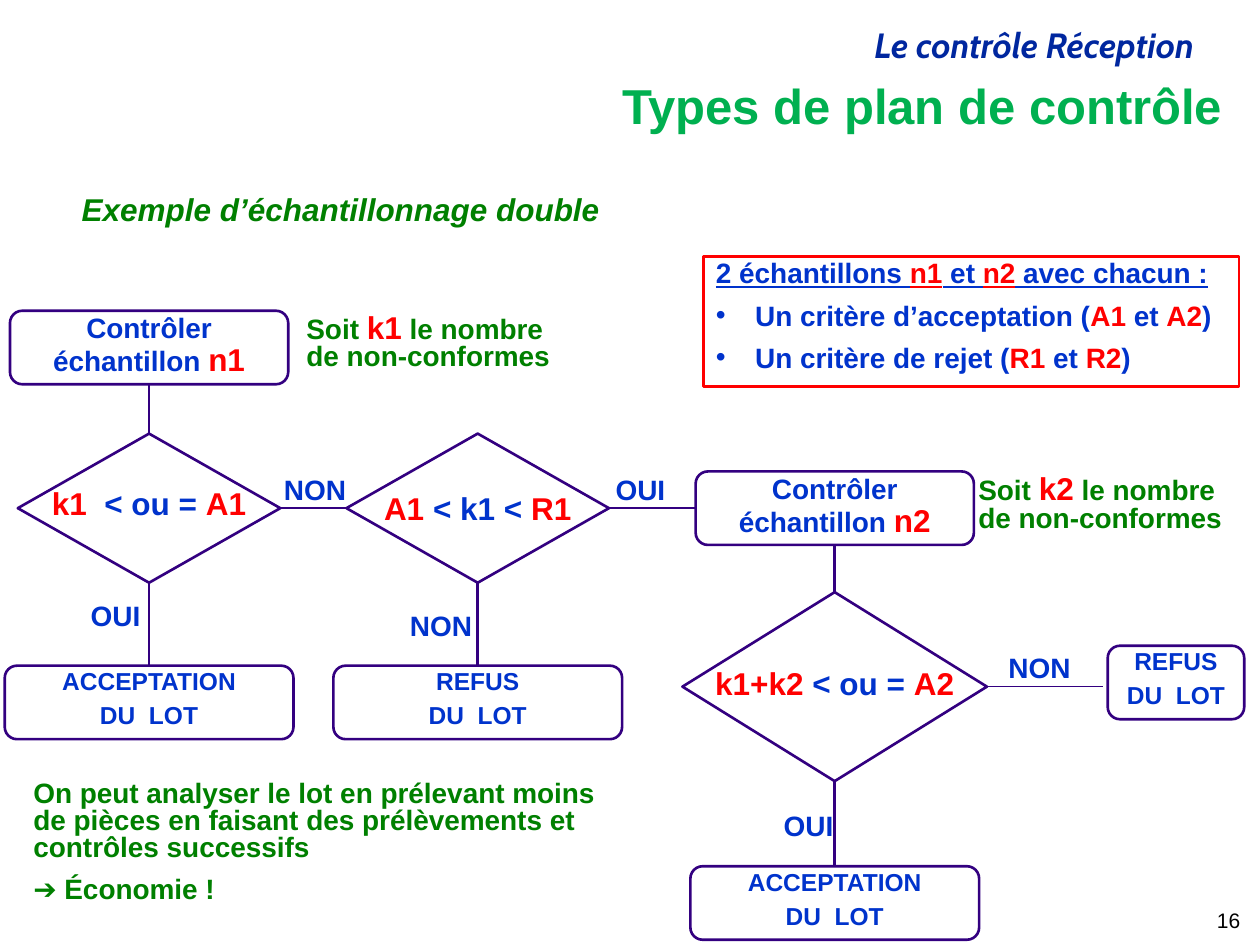
from dataclasses import dataclass, replace
from pptx import Presentation
from pptx.dml.color import RGBColor
from pptx.enum.shapes import MSO_CONNECTOR as Connector, MSO_SHAPE as Shape
from pptx.enum.text import MSO_ANCHOR as Anchor, PP_ALIGN as Align
from pptx.oxml.ns import qn
from pptx.util import Inches, Pt
from lxml.etree import SubElement

TOP, LEFT, BOTTOM, RIGHT = range(4)
COLUMNS, ROWS = 120, 90


@dataclass(frozen=True)
class TextStyle:
    size: float
    color: str
    accent_size: float = 18
    spacing: float = 1.0
    align: Align = Align.CENTER
    italic: bool = False
    underline: bool = False
    bold: bool = True
    font: str = "Arial"


@dataclass(frozen=True)
class Theme:
    line: str = "330080"
    accent: str = "FF0000"
    gap: float = 0.55
    bullet_indent: float = 0.25
    header = TextStyle(20, "00279F", align=Align.RIGHT, italic=True, font="Cabin")
    title = TextStyle(28, "00B050", spacing=0.9, align=Align.RIGHT)
    subtitle = TextStyle(18, "008000", align=Align.LEFT, italic=True)
    note = TextStyle(16, "008000", spacing=0.8, align=Align.LEFT)
    sample = TextStyle(16, "0033CC", spacing=0.9)
    decision = TextStyle(18, "0033CC")
    outcome = TextStyle(14, "0033CC", spacing=0.7)
    answer = TextStyle(16, "0033CC")
    criteria = TextStyle(16, "0033CC", accent_size=16, spacing=0.8, align=Align.LEFT)
    number = TextStyle(12, "000000", align=Align.RIGHT, bold=False)


def assign(target, **values):
    for name, value in values.items():
        setattr(target, name, value)


class FlowSlide:
    def __init__(self, deck, theme):
        self.theme = theme
        self.cell_width = deck.slide_width / COLUMNS
        self.cell_height = deck.slide_height / ROWS
        self.page = deck.slides.add_slide(deck.slide_layouts[5])

    def place(self, column, row, columns, rows):
        return (round(column * self.cell_width), round(row * self.cell_height),
                round(columns * self.cell_width), round(rows * self.cell_height))

    def fill_text(self, frame, lines, style, bulleted=False):
        for line in lines:
            first = not frame.text
            para = frame.paragraphs[0] if first else frame.add_paragraph()
            assign(para, alignment=style.align, line_spacing=style.spacing,
                   space_before=Pt(0 if first else style.size * self.theme.gap))
            if bulleted:
                indent = Inches(self.theme.bullet_indent)
                properties = para._p.get_or_add_pPr()
                properties.set("marL", str(indent))
                properties.set("indent", str(-indent))
                SubElement(properties, qn("a:buFont"), typeface="Arial")
                SubElement(properties, qn("a:buChar"), char="•")
            for index, text in enumerate(line.split("*")):
                if text:
                    self.span(para, text, style, accented=index % 2 == 1)

    def span(self, para, text, style, accented):
        span = para.add_run()
        span.text = text
        assign(span.font, name=style.font, bold=style.bold, italic=style.italic,
               underline=style.underline,
               size=Pt(style.accent_size if accented else style.size))
        color = self.theme.accent if accented else style.color
        span.font.color.rgb = RGBColor.from_string(color)

    def title(self, text, *cells):
        box = self.page.shapes.title
        left, top, width, height = self.place(*cells)
        assign(box, left=left, top=top, width=width, height=height)
        assign(box.text_frame, word_wrap=True, vertical_anchor=Anchor.MIDDLE)
        self.fill_text(box.text_frame, [text], self.theme.title)

    def text(self, lines, style, *cells, wrap=True, anchor=Anchor.TOP):
        box = self.page.shapes.add_textbox(*self.place(*cells))
        assign(box.text_frame, word_wrap=wrap, vertical_anchor=anchor)
        self.fill_text(box.text_frame, lines, style)

    def outline(self, kind, color, *cells):
        shape = self.page.shapes.add_shape(kind, *self.place(*cells))
        shape.shadow.inherit = False
        shape.fill.background()
        shape.line.color.rgb = RGBColor.from_string(color)
        shape.line.width = Pt(1.5)
        return shape

    def node(self, kind, lines, style, center, middle, columns, rows, **frame_format):
        shape = self.outline(kind, self.theme.line, center - columns / 2,
                             middle - rows / 2, columns, rows)
        margins = dict.fromkeys(("margin_left", "margin_right", "margin_top", "margin_bottom"), 0)
        assign(shape.text_frame, **{**margins, **frame_format})
        self.fill_text(shape.text_frame, lines, style)
        return shape

    def sample(self, name, center, middle):
        return self.node(Shape.FLOWCHART_ALTERNATE_PROCESS, [f"Contrôler échantillon *{name}*"],
                         self.theme.sample, center, middle, 26.5, 7,
                         word_wrap=True, vertical_anchor=Anchor.TOP)

    def outcome(self, verdict, center, middle, columns=27.5):
        return self.node(Shape.FLOWCHART_ALTERNATE_PROCESS, [verdict, "DU  LOT"],
                         self.theme.outcome, center, middle, columns, 7,
                         word_wrap=True, vertical_anchor=Anchor.TOP, margin_top=Inches(0.04))

    def decision(self, test, center, middle, columns, rows, lift=0):
        return self.node(Shape.FLOWCHART_DECISION, [test], self.theme.decision,
                         center, middle, columns, rows, word_wrap=False,
                         vertical_anchor=Anchor.MIDDLE, margin_bottom=Inches(lift))

    def criteria(self, heading, items, *cells):
        frame = self.outline(Shape.RECTANGLE, self.theme.accent, *cells).text_frame
        assign(frame, word_wrap=True, vertical_anchor=Anchor.TOP)
        self.fill_text(frame, [heading], replace(self.theme.criteria, underline=True))
        self.fill_text(frame, items, self.theme.criteria, bulleted=True)

    def link(self, start, start_side, end, end_side=None, weight=1.5):
        points = (0, 0, 0, 0) if end_side is not None else self.place(*end, *end)
        line = self.page.shapes.add_connector(Connector.STRAIGHT, *points)
        line.begin_connect(start, start_side)
        if end_side is not None:
            line.end_connect(end, end_side)
        line.line.color.rgb = RGBColor.from_string(self.theme.line)
        line.line.width = Pt(weight)
        SubElement(line._element.spPr, qn("a:effectLst"))


def main():
    deck = Presentation()
    assign(deck, slide_width=Inches(10), slide_height=Inches(7.5))
    theme = Theme()
    flow = FlowSlide(deck, theme)

    flow.text(["Le contrôle Réception"], theme.header, 43.9, 1.6, 71, 5.2)
    flow.title("Types de plan de contrôle", 22.6, 7.3, 95, 6)
    flow.text(["Exemple d’échantillonnage double"], theme.subtitle, 6.6, 17.5, 52.2, 4.8, wrap=False)

    first, second, third, last = 14.2, 45.5, 79.5, 112
    upper, middle, lower, lots = 33.1, 48.4, 65.4, 66.9

    sample_one = flow.sample("n1", first, upper)
    accept_test = flow.decision("*k1*  < ou = *A1*", first, middle, 25, 14.2, lift=0.08)
    accept_one = flow.outcome("ACCEPTATION", first, lots)
    retry_test = flow.decision("*A1* < k1 < *R1*", second, middle, 25, 14.2)
    refuse_one = flow.outcome("REFUS", second, lots)
    sample_two = flow.sample("n2", third, middle)
    final_test = flow.decision("*k1+k2* < ou = *A2*", third, lower, 29, 18, lift=0.06)
    accept_two = flow.outcome("ACCEPTATION", third, 86)
    flow.outcome("REFUS", last, 65, columns=13)

    for start, start_side, end, end_side in (
        (sample_one, BOTTOM, accept_test, TOP),
        (accept_test, BOTTOM, accept_one, TOP),
        (accept_test, RIGHT, retry_test, LEFT),
        (retry_test, BOTTOM, refuse_one, TOP),
        (retry_test, RIGHT, sample_two, LEFT),
        (sample_two, BOTTOM, final_test, TOP),
        (final_test, BOTTOM, accept_two, TOP),
    ):
        flow.link(start, start_side, end, end_side)
    flow.link(final_test, RIGHT, (105, lower), weight=0.75)

    for answer, column, row in (
        ("OUI", 6, 56.4), ("NON", 25, 44.4), ("NON", 37, 57.4),
        ("OUI", 56, 44.4), ("NON", 94, 61.4), ("OUI", 72, 76.4),
    ):
        flow.text([answer], theme.answer, column, row, 10, 4.4)

    for count, column, row in (("k1", 28, 29.4), ("k2", 92, 44.8)):
        flow.text([f"Soit *{count}* le nombre de non-conformes"], theme.note, column, row, 27, 6.6)

    flow.text(["On peut analyser le lot en prélevant moins de pièces en faisant "
               "des prélèvements et contrôles successifs", "➔ Économie !"],
              theme.note, 2, 73.9, 58, 13.2)
    flow.criteria("2 échantillons *n1* et *n2* avec chacun :",
                  [" Un critère d’acceptation (*A1* et *A2*)",
                   " Un critère de rejet (*R1* et *R2*)"], 67, 24.4, 51, 12.4)
    flow.text(["16"], theme.number, 92.3, 85.2, 27, 4.8, anchor=Anchor.MIDDLE)

    deck.save("out.pptx")


if __name__ == "__main__":
    main()
